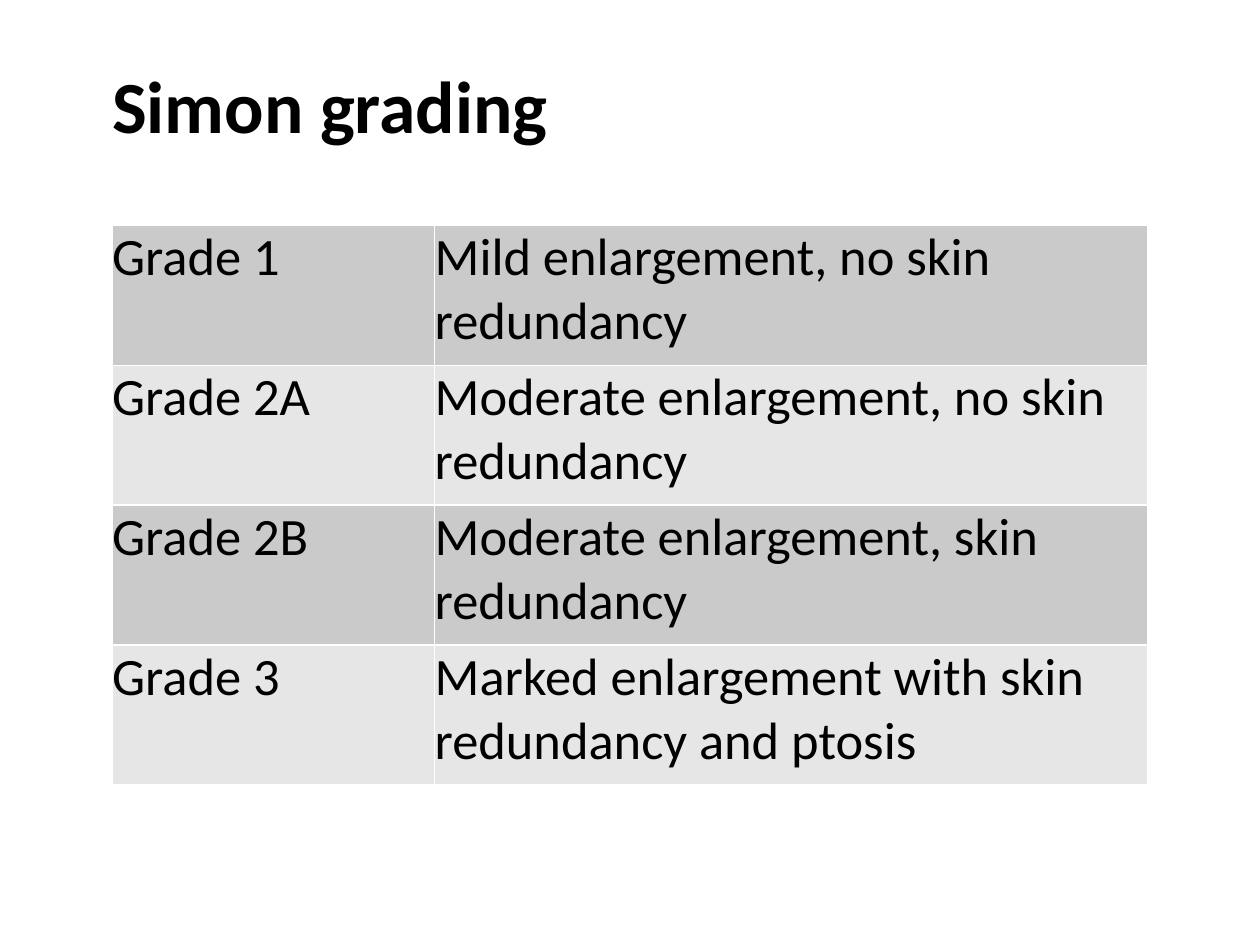
from typing import NamedTuple

from lxml.etree import SubElement
from pptx import Presentation
from pptx.dml.color import RGBColor
from pptx.enum.text import MSO_AUTO_SIZE as AutoSize
from pptx.oxml.ns import qn
from pptx.util import Inches, Pt

COLORS = {"text": "000000", "dark": "CACACA", "light": "E6E6E6", "border": "FFFFFF"}
FONT = "Calibri"
WIDTH, HEIGHT = Inches(10), Inches(7.5)
COLUMN_SHARES = (0.256, 0.566)
ROW_SHARE = 1.11 / 7.5


class Grade(NamedTuple):
    name: str
    description: str


GRADES = (
    Grade("Grade 1", "Mild enlargement, no skin redundancy"),
    Grade("Grade 2A", "Moderate enlargement, no skin redundancy"),
    Grade("Grade 2B", "Moderate enlargement, skin redundancy"),
    Grade("Grade 3", "Marked enlargement with skin redundancy and ptosis"),
)


def across(share: float) -> int:
    return round(WIDTH * share)


def down(share: float) -> int:
    return round(HEIGHT * share)


def add_run(paragraph, text: str, size: float, bold: bool = False) -> None:
    run = paragraph.add_run()
    run.text = text
    run.font.name = FONT
    run.font.size = Pt(size)
    run.font.bold = bold
    run.font.color.rgb = RGBColor.from_string(COLORS["text"])


def add_borders(cell) -> None:
    properties = cell._tc.get_or_add_tcPr()
    for side in ("L", "R", "T", "B"):
        line = SubElement(properties, qn(f"a:ln{side}"), w=str(Pt(1)))
        fill = SubElement(line, qn("a:solidFill"))
        SubElement(fill, qn("a:srgbClr"), val=COLORS["border"])


def fill_cell(cell, text: str, color: str) -> None:
    cell.margin_left = cell.margin_right = cell.margin_top = cell.margin_bottom = 0
    add_borders(cell)
    cell.fill.solid()
    cell.fill.fore_color.rgb = RGBColor.from_string(COLORS[color])
    add_run(cell.text_frame.paragraphs[0], text, 30)


def add_grade_table(slide, grades: tuple[Grade, ...]) -> None:
    table = slide.shapes.add_table(
        len(grades), len(COLUMN_SHARES), across(0.089), down(1.79 / 7.5),
        across(sum(COLUMN_SHARES)), down(ROW_SHARE * len(grades)),
    ).table
    for column, share in zip(table.columns, COLUMN_SHARES):
        column.width = across(share)
    for index, (row, grade) in enumerate(zip(table.rows, grades)):
        row.height = down(ROW_SHARE)
        for cell, text in zip(row.cells, grade):
            fill_cell(cell, text, "light" if index % 2 else "dark")


def add_title(slide, text: str) -> None:
    box = slide.shapes.add_textbox(across(0.084), down(0.43 / 7.5), across(0.425), down(0.77 / 7.5))
    frame = box.text_frame
    frame.word_wrap = True
    frame.auto_size = AutoSize.SHAPE_TO_FIT_TEXT
    frame.margin_left = frame.margin_right = Inches(0.05)
    frame.margin_top = frame.margin_bottom = Inches(0.05)
    add_run(frame.paragraphs[0], text, 42, bold=True)


def main() -> None:
    presentation = Presentation()
    presentation.slide_width, presentation.slide_height = WIDTH, HEIGHT
    slide = presentation.slides.add_slide(presentation.slide_layouts[6])
    add_grade_table(slide, GRADES)
    add_title(slide, "Simon grading")
    presentation.save("out.pptx")


if __name__ == "__main__":
    main()
